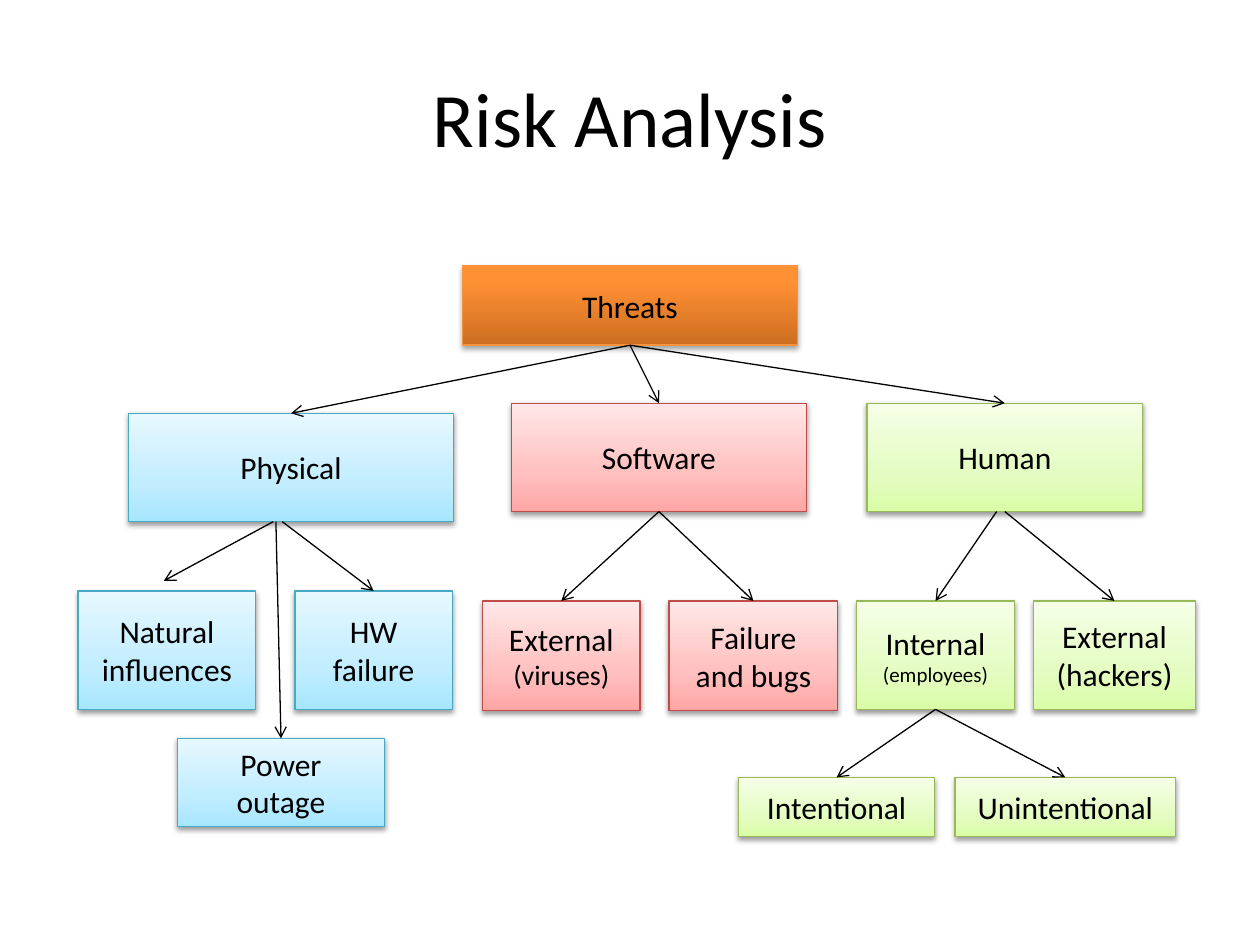
from copy import deepcopy

from lxml.etree import SubElement
from pptx import Presentation
from pptx.dml.color import RGBColor
from pptx.enum.shapes import MSO_CONNECTOR, MSO_SHAPE
from pptx.enum.text import MSO_ANCHOR, PP_ALIGN
from pptx.oxml.ns import qn
from pptx.util import Inches, Pt

BLACK = RGBColor(0x00, 0x00, 0x00)
ORANGE_EDGE = RGBColor(0xF6, 0x92, 0x40)
BLUE_EDGE = RGBColor(0x46, 0xAA, 0xC5)
RED_EDGE = RGBColor(0xBF, 0x4C, 0x48)
GREEN_EDGE = RGBColor(0x98, 0xB9, 0x55)

ORANGE_FILL = [(0, RGBColor(0xCC, 0x6E, 0x20)), (0.8, RGBColor(0xFF, 0x90, 0x34)),
               (1, RGBColor(0xFF, 0x91, 0x36))]
BLUE_FILL = [(0, RGBColor(0xA7, 0xE6, 0xFF)), (0.35, RGBColor(0xC1, 0xED, 0xFF)),
             (1, RGBColor(0xE7, 0xF8, 0xFF))]
RED_FILL = [(0, RGBColor(0xFF, 0xA6, 0xA5)), (0.35, RGBColor(0xFF, 0xC0, 0xBF)),
            (1, RGBColor(0xFF, 0xE7, 0xE7))]
GREEN_FILL = [(0, RGBColor(0xDA, 0xFD, 0xA7)), (0.35, RGBColor(0xE4, 0xFC, 0xC2)),
              (1, RGBColor(0xF5, 0xFF, 0xE7))]

# Each theme: gradient stops, edge, shadow opacity in %, shadow distance in points
ORANGE = (ORANGE_FILL, ORANGE_EDGE, 35, 1.8)
BLUE = (BLUE_FILL, BLUE_EDGE, 38, 1.6)
RED = (RED_FILL, RED_EDGE, 38, 1.6)
GREEN = (GREEN_FILL, GREEN_EDGE, 38, 1.6)

BOTTOM_SITE, TOP_SITE = 2, 0


def write_text(frame, text, size=18, last_size=None, font="Calibri", color=BLACK):
    """Write one centred paragraph per line; last_size applies to the last line."""
    frame.word_wrap = True
    frame.vertical_anchor = MSO_ANCHOR.MIDDLE
    lines = text.split("\n")
    for number, line in enumerate(lines, 1):
        paragraph = frame.paragraphs[0] if number == 1 else frame.add_paragraph()
        paragraph.alignment = PP_ALIGN.CENTER
        run = paragraph.add_run()
        run.text = line
        run.font.name = font
        run.font.size = Pt(last_size if last_size and number == len(lines) else size)
        run.font.color.rgb = color


class ThreatTree:
    line_width = Pt(0.75)
    shadow_blur = Pt(3.1)

    def __init__(self, slide):
        self.slide = slide

    def title(self, text, left, top, width, height):
        heading = self.slide.shapes.add_textbox(
            Inches(left), Inches(top), Inches(width), Inches(height))
        write_text(heading.text_frame, text, size=44)

    def box(self, text, theme, left, top, width, height, last_size=None):
        stops, edge, opacity, distance = theme
        threat = self.slide.shapes.add_shape(
            MSO_SHAPE.RECTANGLE, Inches(left), Inches(top), Inches(width), Inches(height))
        self.gradient(threat, stops)
        threat.line.color.rgb = edge
        threat.line.width = self.line_width
        self.shadow(threat, opacity, distance)
        write_text(threat.text_frame, text, last_size=last_size)
        return threat

    def gradient(self, threat, stops):
        """Fill from bottom to top with three colours."""
        threat.fill.gradient()
        threat.fill.gradient_angle = 90
        stop_list = threat.element.spPr.find(".//" + qn("a:gsLst"))
        stop_list.append(deepcopy(stop_list[0]))
        for stop, (position, color) in zip(threat.fill.gradient_stops, stops):
            stop.position = position
            stop.color.rgb = color

    def shadow(self, threat, opacity, distance):
        threat.shadow.inherit = False
        effects = threat.element.spPr.find(qn("a:effectLst"))
        outer = SubElement(effects, qn("a:outerShdw"), blurRad=str(self.shadow_blur),
                           dist=str(Pt(distance)), dir="5400000", rotWithShape="0")
        color = SubElement(outer, qn("a:srgbClr"), val=str(BLACK))
        SubElement(color, qn("a:alpha"), val=str(opacity * 1000))

    def arrow(self, parent, child, start=None, end=None):
        """Join parent to child; a given start or end point replaces the glued one."""
        points = [Inches(value) for value in (start or (0, 0)) + (end or (0, 0))]
        branch = self.slide.shapes.add_connector(MSO_CONNECTOR.STRAIGHT, *points)
        if start is None:
            branch.begin_connect(parent, BOTTOM_SITE)
        if end is None:
            branch.end_connect(child, TOP_SITE)
        branch.line.color.rgb = BLACK
        branch.line.width = self.line_width
        SubElement(branch.line._get_or_add_ln(), qn("a:tailEnd"), type="arrow")
        SubElement(branch.element.spPr, qn("a:effectLst"))


def main():
    deck = Presentation()
    deck.slide_width, deck.slide_height = Inches(10), Inches(7.5)
    tree = ThreatTree(deck.slides.add_slide(deck.slide_layouts[6]))

    tree.title("Risk Analysis", 0.5, 0.3, 9, 1.25)
    threats = tree.box("Threats", ORANGE, 3.67, 2.11, 2.66, 0.63)

    physical = tree.box("Physical", BLUE, 1.02, 3.28, 2.58, 0.86)
    software = tree.box("Software", RED, 4.06, 3.2, 2.34, 0.86)
    human = tree.box("Human", GREEN, 6.88, 3.2, 2.19, 0.86)

    natural = tree.box("Natural\ninfluences", BLUE, 0.62, 4.69, 1.41, 0.94)
    hardware = tree.box("HW\nfailure", BLUE, 2.34, 4.69, 1.25, 0.94)
    power = tree.box("Power\noutage", BLUE, 1.41, 5.86, 1.64, 0.7)

    viruses = tree.box("External\n(viruses)", RED, 3.83, 4.77, 1.25, 0.87, last_size=16)
    bugs = tree.box("Failure\nand bugs", RED, 5.31, 4.77, 1.34, 0.87)

    employees = tree.box("Internal\n(employees)", GREEN, 6.8, 4.77, 1.25, 0.86, last_size=12)
    hackers = tree.box("External (hackers)", GREEN, 8.2, 4.77, 1.29, 0.86)
    intentional = tree.box("Intentional", GREEN, 5.86, 6.17, 1.56, 0.47)
    unintentional = tree.box("Unintentional", GREEN, 7.58, 6.17, 1.75, 0.47)

    for parent, children in (
        (threats, (physical, software, human)),
        (software, (viruses, bugs)),
        (human, (hackers,)),
        (employees, (intentional, unintentional)),
    ):
        for child in children:
            tree.arrow(parent, child)

    tree.arrow(physical, natural, start=(2.17, 4.14), end=(1.3, 4.61))
    tree.arrow(physical, hardware, start=(2.24, 4.14))
    tree.arrow(physical, power, start=(2.19, 4.14))
    tree.arrow(human, employees, start=(7.91, 4.06))

    deck.save("out.pptx")


if __name__ == "__main__":
    main()
